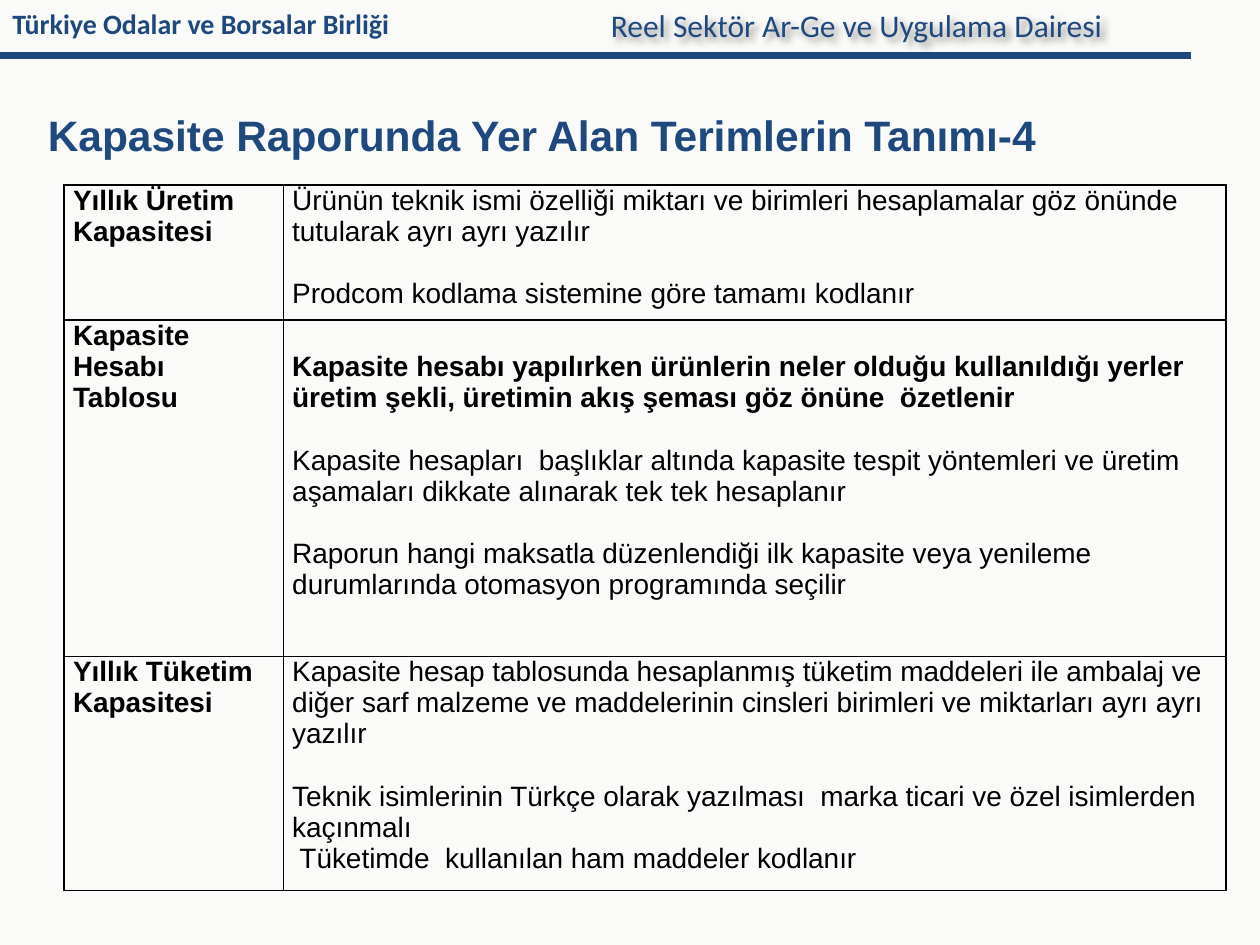
from lxml import etree
from pptx import Presentation
from pptx.dml.color import RGBColor
from pptx.enum.shapes import MSO_CONNECTOR
from pptx.enum.text import MSO_ANCHOR, PP_ALIGN
from pptx.oxml import parse_xml
from pptx.oxml.ns import nsdecls, qn
from pptx.util import Inches, Pt

STRAIGHT = MSO_CONNECTOR.STRAIGHT
MIDDLE, TOP = MSO_ANCHOR.MIDDLE, MSO_ANCHOR.TOP
LEFT = PP_ALIGN.LEFT

NAVY = RGBColor(0x1F, 0x49, 0x7D)
BLACK = RGBColor(0, 0, 0)
PAPER = RGBColor(0xFA, 0xFA, 0xF9)

HEADER = {"name": "Calibri", "size": Pt(18), "bold": False}
OWNER = {"name": "Calibri", "size": Pt(16), "bold": True}
TITLE = {"name": "Arial", "size": Pt(24.3), "bold": True}
TERM = {"name": "Arial", "size": Pt(16), "bold": True}
BODY = {"name": "Arial", "size": Pt(16), "bold": False}
BLANK_LINE = Pt(17.9)

COLUMN_WIDTHS = (1.74, 7.48)
# Term, row height, top inset of the definition, and (text, format, space before)
TERMS = [
    ("Yıllık Üretim Kapasitesi", 1.07, 0, [
        ("Ürünün teknik ismi özelliği miktarı ve birimleri hesaplamalar göz önünde "
         "tutularak ayrı ayrı yazılır", BODY, 0),
        ("Prodcom kodlama sistemine göre tamamı kodlanır", BODY, BLANK_LINE),
    ]),
    ("Kapasite Hesabı Tablosu", 2.67, 0.25, [
        ("Kapasite hesabı yapılırken ürünlerin neler olduğu kullanıldığı yerler "
         "üretim şekli, üretimin akış şeması göz önüne  özetlenir", TERM, 0),
        ("Kapasite hesapları  başlıklar altında kapasite tespit yöntemleri ve üretim "
         "aşamaları dikkate alınarak tek tek hesaplanır", BODY, BLANK_LINE),
        ("Raporun hangi maksatla düzenlendiği ilk kapasite veya yenileme "
         "durumlarında otomasyon programında seçilir", BODY, BLANK_LINE),
    ]),
    ("Yıllık Tüketim Kapasitesi", 1.86, 0, [
        ("Kapasite hesap tablosunda hesaplanmış tüketim maddeleri ile ambalaj ve "
         "diğer sarf malzeme ve maddelerinin cinsleri birimleri ve miktarları ayrı ayrı "
         "yazılır", BODY, 0),
        ("Teknik isimlerinin Türkçe olarak yazılması  marka ticari ve özel isimlerden "
         "kaçınmalı", BODY, BLANK_LINE),
        (" Tüketimde  kullanılan ham maddeler kodlanır", BODY, 0),
    ]),
]


class SlideBuilder:
    def __init__(self, slide):
        self.slide = slide
        slide.background.fill.solid()
        slide.background.fill.fore_color.rgb = PAPER

    def set_text(self, paragraph, text, style, color):
        paragraph.text = text
        paragraph.alignment = LEFT
        for name, value in style.items():
            setattr(paragraph.font, name, value)
        paragraph.font.color.rgb = color

    def title(self, text, left, top, width, height):
        shape = self.slide.shapes.title
        shape.left, shape.top = Inches(left), Inches(top)
        shape.width, shape.height = Inches(width), Inches(height)
        frame = shape.text_frame
        frame.vertical_anchor = MIDDLE
        frame.margin_top, frame.margin_bottom = Inches(0.15), 0
        self.set_text(frame.paragraphs[0], text, TITLE, NAVY)

    def label(self, text, left, top, width, height, style):
        shape = self.slide.shapes.add_textbox(
            Inches(left), Inches(top), Inches(width), Inches(height))
        shape.text_frame.word_wrap = True
        self.set_text(shape.text_frame.paragraphs[0], text, style, NAVY)
        return shape

    def soft_shadow(self, shape):
        shape._element.spPr.append(parse_xml(
            f'<a:effectLst {nsdecls("a")}>'
            '<a:outerShdw blurRad="50800" dist="38100" dir="2700000">'
            '<a:srgbClr val="000000"><a:alpha val="40000"/></a:srgbClr>'
            '</a:outerShdw></a:effectLst>'))

    def rule(self, left, right, y, weight):
        line = self.slide.shapes.add_connector(
            STRAIGHT, Inches(left), Inches(y), Inches(right), Inches(y))
        line.line.color.rgb = NAVY
        line.line.width = Pt(weight)
        etree.SubElement(line._element.spPr, qn("a:effectLst"))

    def border(self, cell):
        properties = cell._tc.get_or_add_tcPr()
        for position, side in enumerate(("lnL", "lnR", "lnT", "lnB")):
            properties.insert(position, parse_xml(
                f'<a:{side} {nsdecls("a")} w="12700"><a:solidFill>'
                f'<a:srgbClr val="{BLACK}"/></a:solidFill></a:{side}>'))

    def cell(self, cell, entries, top_inset=0):
        cell.fill.background()
        cell.vertical_anchor = TOP
        cell.margin_left = cell.margin_right = Inches(0.07)
        cell.margin_top, cell.margin_bottom = Inches(top_inset), 0
        frame = cell.text_frame
        for index, (text, style, space) in enumerate(entries):
            paragraph = frame.add_paragraph() if index else frame.paragraphs[0]
            self.set_text(paragraph, text, style, BLACK)
            paragraph.space_before = space
        self.border(cell)

    def definitions(self, terms, left, top):
        width, height = sum(COLUMN_WIDTHS), sum(term[1] for term in terms)
        table = self.slide.shapes.add_table(
            len(terms), len(COLUMN_WIDTHS), Inches(left), Inches(top),
            Inches(width), Inches(height)).table
        table.first_row = table.horz_banding = False
        for column, column_width in zip(table.columns, COLUMN_WIDTHS):
            column.width = Inches(column_width)
        for row, (term, row_height, top_inset, entries) in zip(table.rows, terms):
            row.height = Inches(row_height)
            self.cell(row.cells[0], [(term, TERM, 0)])
            self.cell(row.cells[1], entries, top_inset)


def main():
    presentation = Presentation()
    presentation.slide_width, presentation.slide_height = Inches(10), Inches(7.5)
    title_only = presentation.slide_layouts[5]
    builder = SlideBuilder(presentation.slides.add_slide(title_only))
    builder.rule(0, 9.45, 0.44, 4)
    builder.label("Türkiye Odalar ve Borsalar Birliği", 0, 0, 8.15, 0.37, OWNER)
    builder.title("Kapasite Raporunda Yer Alan Terimlerin Tanımı-4", 0.28, 0.76, 9.24, 0.47)
    department = builder.label(
        "Reel Sektör Ar-Ge ve Uygulama Dairesi", 4.75, 0, 4.41, 0.4, HEADER)
    builder.soft_shadow(department)
    builder.definitions(TERMS, 0.51, 1.47)
    presentation.save("out.pptx")


if __name__ == "__main__":
    main()
